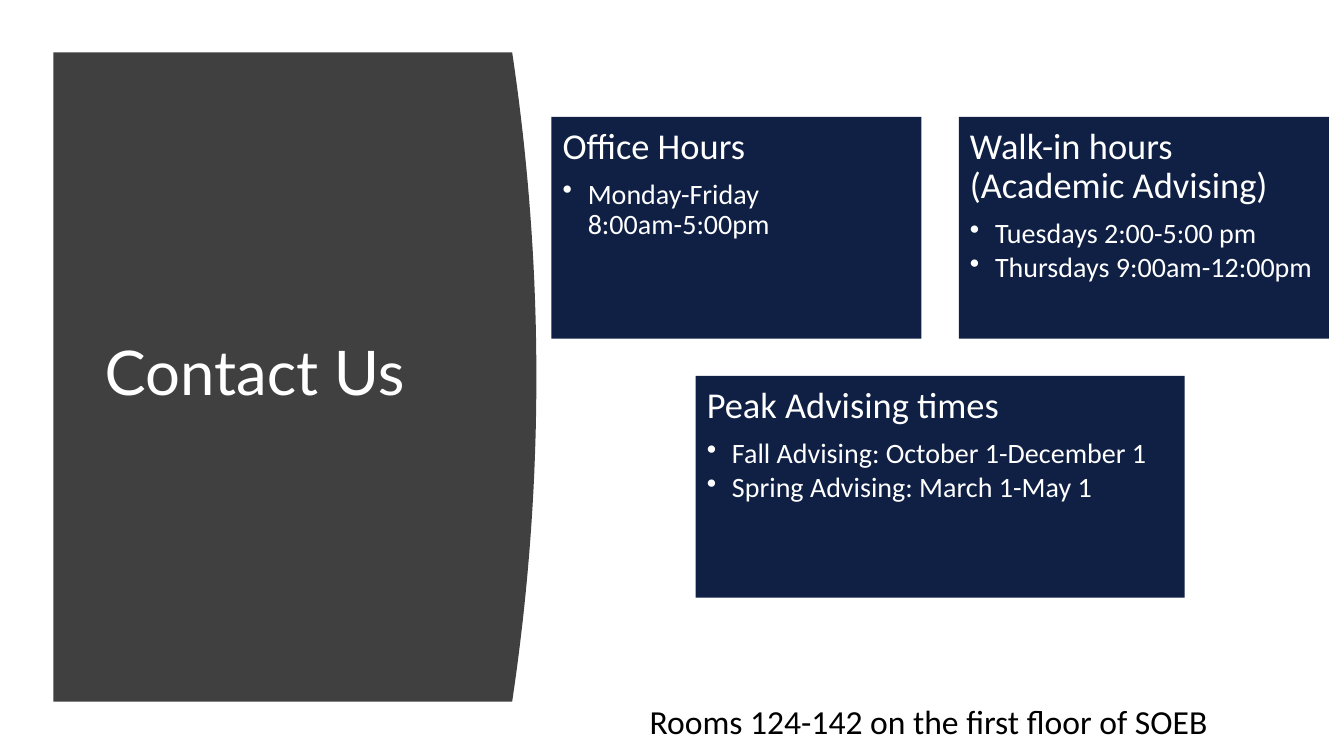
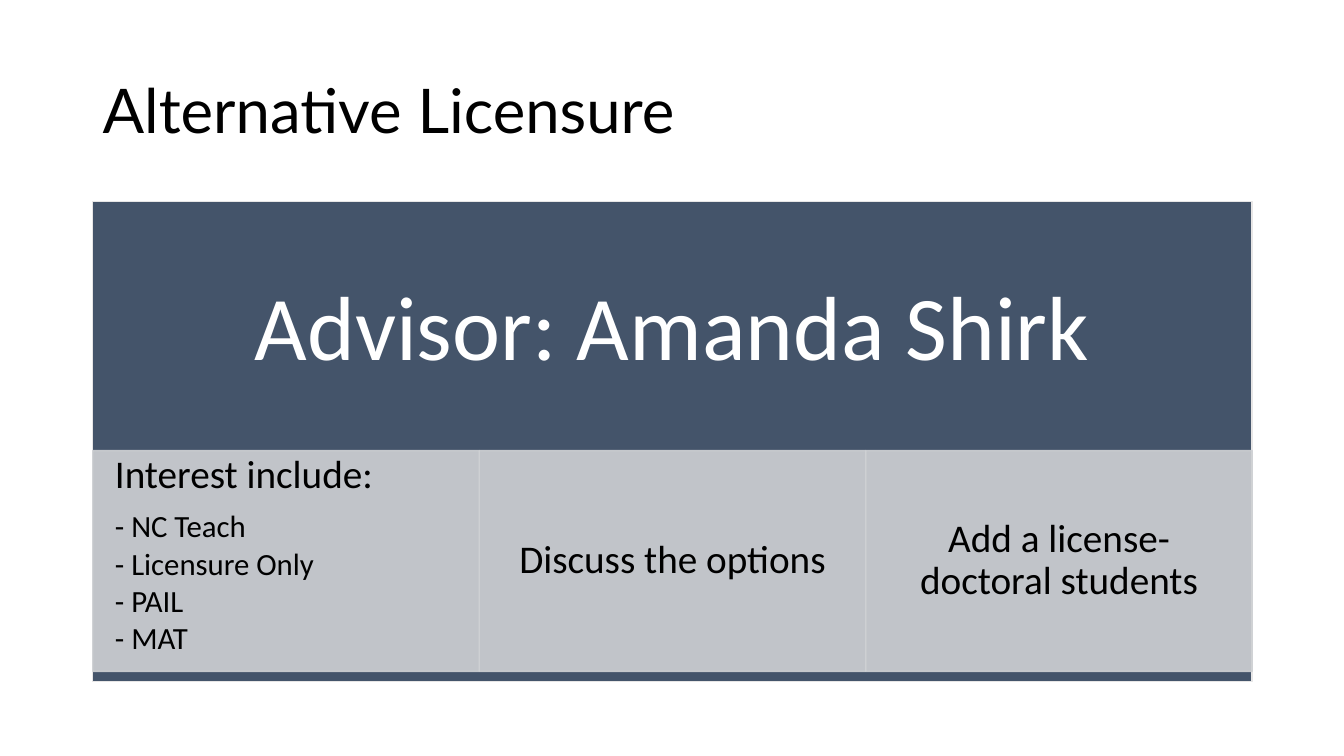
from pptx import Presentation
from pptx.dml.color import RGBColor
from pptx.enum.shapes import MSO_SHAPE
from pptx.enum.text import MSO_ANCHOR, PP_ALIGN
from pptx.oxml.ns import qn
from pptx.util import Pt
from lxml.etree import SubElement

PX = 9144  # 100 px to the inch
SLIDE_WIDTH, SLIDE_HEIGHT = 1333, 750

WHITE, BLACK = "FFFFFF", "000000"
CHARCOAL, NAVY = "404040", "0F2044"
SLATE, SILVER, PALE = "44546A", "CFD1D4", "E7E6E6"
TITLE_FONT, BODY_FONT = "Lato", "Calibri"
DEFAULT_MARGINS = (10, 5)

CONTACT_TITLE = "Contact Us"
CARDS = [
    ("Office Hours", ["Monday-Friday\n8:00am-5:00pm"]),
    ("Walk-in hours (Academic Advising)",
     ["Tuesdays 2:00-5:00 pm", "Thursdays 9:00am-12:00pm"]),
    ("Peak Advising times",
     ["Fall Advising: October 1-December 1", "Spring Advising: March 1-May 1"]),
]
ROOMS = "Rooms 124-142 on the first floor of SOEB"

LICENSURE_TITLE = "Alternative Licensure"
ADVISOR = "Advisor: Amanda Shirk"
COLUMNS = [
    ("Interest include:", ["- NC Teach", "- Licensure Only", "- PAIL", "- MAT"]),
    ("Discuss the options", []),
    ("Add a license-doctoral students", []),
]


def rgb(hex_color):
    return RGBColor.from_string(hex_color)


def emu(*lengths):
    return [round(length * PX) for length in lengths]


def paint(shape, fill, line=None, opacity=100):
    shape.shadow.inherit = False
    shape.fill.solid()
    shape.fill.fore_color.rgb = rgb(fill)
    if line:
        shape.line.color.rgb = rgb(line)
        shape.line.width = Pt(1)
    else:
        shape.line.fill.background()
    if opacity < 100:
        for color in shape.element.spPr.iter(qn("a:srgbClr")):
            SubElement(color, qn("a:alpha"), val=str(opacity * 1000))


def add_rectangle(slide, box, fill, line=None, opacity=100):
    shape = slide.shapes.add_shape(MSO_SHAPE.RECTANGLE, *emu(*box))
    paint(shape, fill, line, opacity)
    return shape


def prepare_frame(shape, anchor, margins=DEFAULT_MARGINS):
    frame = shape.text_frame
    frame.word_wrap = True
    frame.vertical_anchor = anchor
    side, end = emu(*margins)
    frame.margin_left = frame.margin_right = side
    frame.margin_top = frame.margin_bottom = end
    return frame


def style(paragraph, size, color, font=BODY_FONT, align=PP_ALIGN.LEFT,
          spacing=0.9, after=0):
    paragraph.alignment = align
    paragraph.line_spacing = spacing
    paragraph.space_after = Pt(after)
    for run in paragraph.runs:
        run.font.name = font
        run.font.size = Pt(size)
        run.font.color.rgb = rgb(color)


def add_text(slide, box, text, size, color, margins=DEFAULT_MARGINS, **options):
    """Add a one-paragraph text box, centred vertically."""
    text_box = slide.shapes.add_textbox(*emu(*box))
    frame = prepare_frame(text_box, MSO_ANCHOR.MIDDLE, margins)
    frame.text = text
    style(frame.paragraphs[0], size, color, **options)


def add_title(slide, box, text, color):
    add_text(slide, box, text, 44, color, font=TITLE_FONT)


def fill_list(frame, heading, items, sizes, color, bullet=None, align=PP_ALIGN.LEFT):
    """Write a heading and its second-level items with a hanging indent."""
    heading_size, item_size = sizes
    frame.text = heading
    style(frame.paragraphs[0], heading_size, color, align=align,
          after=round(heading_size * 0.35))
    for item in items:
        paragraph = frame.add_paragraph()
        paragraph.text = item
        paragraph.level = 1
        properties = paragraph._p.get_or_add_pPr()
        [indent] = emu(25)
        properties.set("marL", str(indent))
        properties.set("indent", str(-indent))
        if bullet:
            SubElement(properties, qn("a:buChar"), char=bullet)
        else:
            SubElement(properties, qn("a:buNone"))
        style(paragraph, item_size, color, after=round(item_size * 0.15))


def add_curved_panel(slide, left, top, right, bottom, bulge):
    """Draw a panel whose right side swells outwards as a parabola."""
    steps = 40
    edge = []
    for step in range(steps + 1):
        offset = 2 * step / steps - 1
        edge.append((right + bulge * (1 - offset ** 2),
                     top + (bottom - top) * step / steps))
    builder = slide.shapes.build_freeform(*emu(left, top), scale=1.0)
    builder.add_line_segments([emu(*point) for point in edge + [(left, bottom)]])
    paint(builder.convert_to_shape(), CHARCOAL)


def build_contact_slide(slide):
    add_curved_panel(slide, 53, 52, 508, 696, bulge=24)
    add_title(slide, (94, 111, 374, 524), CONTACT_TITLE, WHITE)

    left, top, width, height, gap = 547, 116, 367, 220, 37
    wide = 485
    row_width = 2 * width + gap
    boxes = [(left + column * (width + gap), top, width, height) for column in range(2)]
    boxes.append((left + (row_width - wide) / 2, top + height + gap, wide, height))
    for box, (heading, items) in zip(boxes, CARDS):
        card = add_rectangle(slide, box, NAVY)
        frame = prepare_frame(card, MSO_ANCHOR.TOP, (11, 11))
        fill_list(frame, heading, items, (26, 20), WHITE, bullet="•")

    add_text(slide, (509, 690, 824, 50), ROOMS, 24, BLACK,
             align=PP_ALIGN.CENTER, spacing=1.0)


def build_licensure_slide(slide):
    left, width = 92, 1150
    add_title(slide, (left, 40, width, 145), LICENSURE_TITLE, BLACK)
    add_rectangle(slide, (left, 200, width, 476), SLATE, PALE)
    add_text(slide, (left, 200, width, 257), ADVISOR, 65, WHITE, (51, 51),
             align=PP_ALIGN.CENTER)

    column_width = width / len(COLUMNS)
    for index, (heading, items) in enumerate(COLUMNS):
        box = (left + index * column_width, 447, column_width, 219)
        column = add_rectangle(slide, box, SILVER, SILVER, opacity=90)
        frame = prepare_frame(column, MSO_ANCHOR.TOP if items else MSO_ANCHOR.MIDDLE, (22, 4))
        fill_list(frame, heading, items, (28, 22), BLACK,
                  align=PP_ALIGN.LEFT if items else PP_ALIGN.CENTER)


def main():
    presentation = Presentation()
    presentation.slide_width, presentation.slide_height = emu(SLIDE_WIDTH, SLIDE_HEIGHT)
    blank = presentation.slide_layouts[6]
    for build in (build_contact_slide, build_licensure_slide):
        build(presentation.slides.add_slide(blank))
    presentation.save("out.pptx")


if __name__ == "__main__":
    main()
